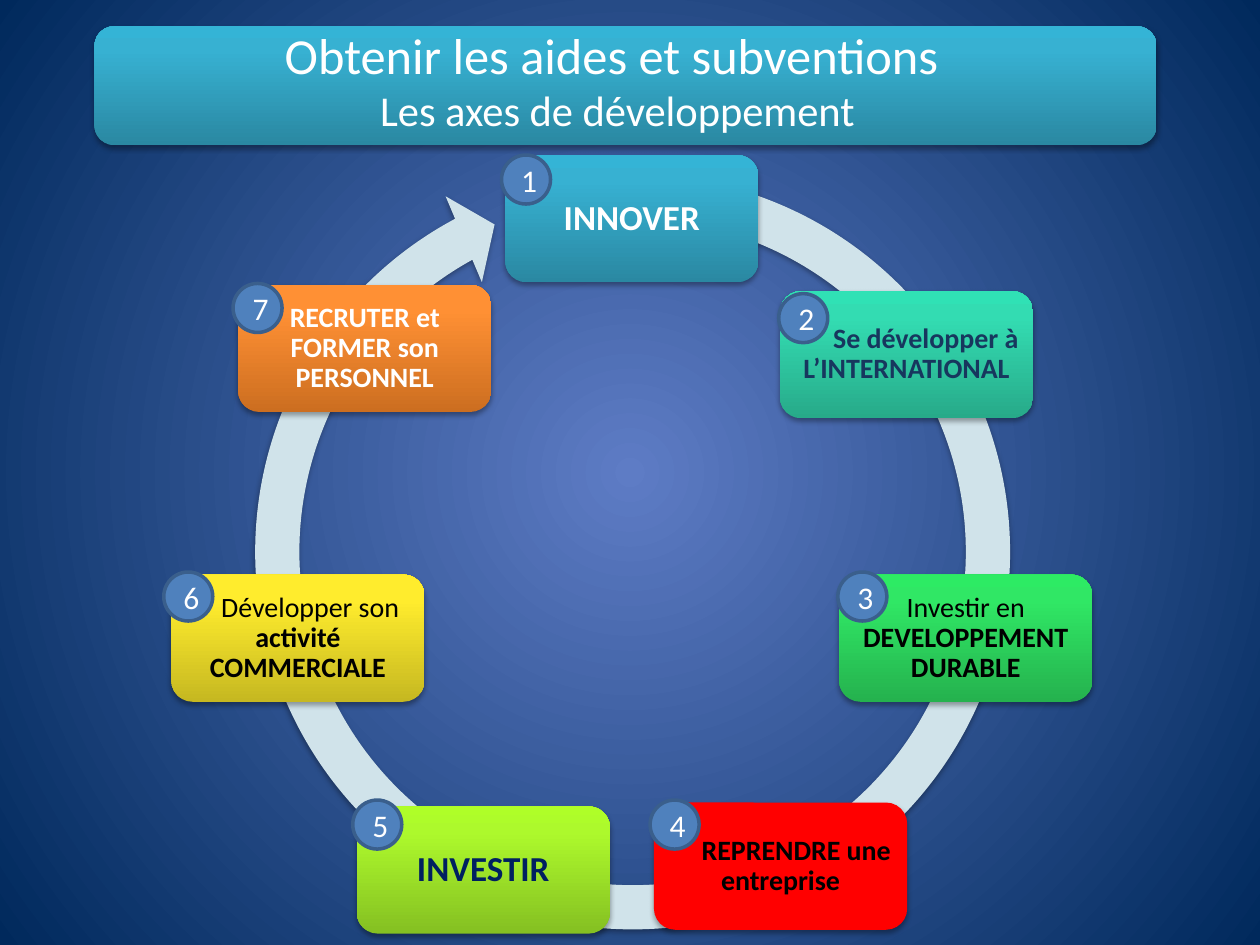
from lxml.etree import SubElement
from pptx import Presentation
from pptx.dml.color import RGBColor
from pptx.enum.shapes import MSO_SHAPE as Shape
from pptx.enum.text import MSO_ANCHOR as Anchor, PP_ALIGN as Align
from pptx.oxml.ns import qn
from pptx.util import Pt

FONT = "Calibri"
COLORS = {
    "white": "FFFFFF", "black": "000000", "navy": "17375E", "deep": "002060",
    "centre": "5E7CC5", "edge": "00295C", "ring": "D0E3EA",
    "badge": "4F81BD", "badge line": "3A5F8C", "red": "FF0000",
}
# Each gradient runs from the bottom of the box to its top
GRADIENTS = {
    "blue": ("2A88A2", "37B1D2", "34B4D6"),
    "teal": ("27AA89", "33DCB2", "30E1B5"),
    "green": ("25B24E", "30E765", "2DEB64"),
    "lime": ("85C022", "ADF92C", "AFFE28"),
    "yellow": ("C6B821", "FFEC2D", "FFED2E"),
    "orange": ("CC6E20", "FF9034", "FF9136"),
}
NODE_SIZE = (144.7, 72.7)
BADGE_SIZE = (28, 28)

# Node corner, badge corner, fill, text colour, size, first-line indent, runs (text, bold)
AXES = [
    ((288.7, 88.6), (286.6, 88.6), "blue", "white", 20, 0, [("INNOVER", True)]),
    ((445.7, 166.3), (445, 167.8), "teal", "navy", 16, 22,
     [("Se développer à L’INTERNATIONAL", True)]),
    ((479.5, 328.3), (478.8, 326.9), "green", "black", 16, 0,
     [("Investir en ", False), ("DEVELOPPEMENT DURABLE", True)]),
    ((373.7, 458.6), (371.5, 457.2), "red", "black", 16, 18,
     [("REPRENDRE une entreprise", True)]),
    ((203.8, 460.8), (201.6, 457.2), "lime", "deep", 20, 0, [("INVESTIR", True)]),
    ((97.9, 328.3), (93.6, 326.9), "yellow", "black", 16, 14,
     [("Développer son ", False), ("activité COMMERCIALE", True)]),
    ((136.1, 162.7), (133.2, 162), "orange", "white", 16, 0,
     [("RECRUTER et FORMER son PERSONNEL", True)]),
]


def rgb(name):
    return RGBColor.from_string(COLORS[name])


def set_stops(gradient, stops):
    """Replace the stops of a gradient with (percent, hex, alpha) triples."""
    stop_list = gradient.find(qn("a:gsLst"))
    for stop in list(stop_list):
        stop_list.remove(stop)
    for percent, color, alpha in stops:
        stop = SubElement(stop_list, qn("a:gs"), pos=str(percent * 1000))
        tint = SubElement(stop, qn("a:srgbClr"), val=color)
        if alpha < 100:
            SubElement(tint, qn("a:alpha"), val=str(alpha * 1000))


def paint_background(page):
    page.background.fill.gradient()
    gradient = next(page._element.iter(qn("a:gradFill")))
    set_stops(gradient, [(0, COLORS["centre"], 54), (100, COLORS["edge"], 100)])
    gradient.remove(gradient.find(qn("a:lin")))
    circle = SubElement(gradient, qn("a:path"), path="circle")
    SubElement(circle, qn("a:fillToRect"), l="50000", t="50000", r="50000", b="50000")


def fill_shape(shape, fill):
    if fill not in GRADIENTS:
        shape.fill.solid()
        shape.fill.fore_color.rgb = rgb(fill)
        return
    shape.fill.gradient()
    shape.fill.gradient_angle = 90
    gradient = shape._element.spPr.find(qn("a:gradFill"))
    set_stops(gradient, zip((0, 80, 100), GRADIENTS[fill], (100, 100, 100)))
    gradient.find(qn("a:lin")).set("ang", str(270 * 60000))


def add_shadow(shape):
    effects = shape._element.spPr.find(qn("a:effectLst"))
    shadow = SubElement(effects, qn("a:outerShdw"), blurRad=str(Pt(3.1)),
                        dist=str(Pt(1.8)), dir=str(90 * 60000), rotWithShape="0")
    color = SubElement(shadow, qn("a:srgbClr"), val=COLORS["black"])
    SubElement(color, qn("a:alpha"), val="35000")


def add_figure(page, kind, corner, size, fill, shadow=True):
    shape = page.shapes.add_shape(kind, *map(Pt, (*corner, *size)))
    shape.shadow.inherit = False
    fill_shape(shape, fill)
    shape.line.fill.background()
    if shadow:
        add_shadow(shape)
    return shape


def add_span(para, text, size, color, bold=False):
    span = para.add_run()
    span.text = text
    span.font.name = FONT
    span.font.size = Pt(size)
    span.font.bold = bold
    span.font.color.rgb = rgb(color)


def centred_para(shape):
    frame = shape.text_frame
    frame.word_wrap = True
    frame.vertical_anchor = Anchor.MIDDLE
    para = frame.paragraphs[0]
    para.alignment = Align.CENTER
    return para


def add_title(page):
    add_figure(page, Shape.ROUNDED_RECTANGLE, (54, 15), (607, 68), "blue")
    box = page.shapes.add_textbox(Pt(0), Pt(15), Pt(705.6), Pt(57))
    box.text_frame.margin_top = Pt(4)
    box.text_frame.margin_bottom = 0
    para = centred_para(box)
    add_span(para, "Obtenir les aides et subventions ", 28.8, "white")
    para.add_line_break()
    add_span(para, "Les axes de développement", 24.3, "white")


def add_ring(page):
    ring = add_figure(page, Shape.CIRCULAR_ARROW, (131.8, 85.7), (459.4, 459.4), "ring")
    for index, value in enumerate((0.055, 3.307, 144.974, 169.607, 0.058)):
        ring.adjustments[index] = value


def add_node(page, corner, fill, color, size, indent, runs):
    node = add_figure(page, Shape.ROUNDED_RECTANGLE, corner, NODE_SIZE, fill)
    frame = node.text_frame
    frame.margin_left = frame.margin_right = Pt(1.5)
    frame.margin_top = frame.margin_bottom = Pt(1.5)
    para = centred_para(node)
    para.line_spacing = 0.9
    if indent:
        # The first line makes room for the badge
        para._p.get_or_add_pPr().set("indent", str(Pt(indent)))
    for text, bold in runs:
        add_span(para, text, size, color, bold)


def add_badge(page, corner, number):
    badge = add_figure(page, Shape.OVAL, corner, BADGE_SIZE, "badge", shadow=False)
    badge.line.color.rgb = rgb("badge line")
    badge.line.width = Pt(2)
    add_span(centred_para(badge), str(number), 18, "white")


def main():
    deck = Presentation()
    deck.slide_width, deck.slide_height = Pt(720), Pt(540)
    page = deck.slides.add_slide(deck.slide_layouts[6])

    # Backdrop, heading and ring
    paint_background(page)
    add_title(page)
    add_ring(page)

    # Development axes, then their numbers on top
    for corner, _, *style in AXES:
        add_node(page, corner, *style)
    for number, axis in enumerate(AXES, start=1):
        add_badge(page, axis[1], number)

    deck.save("out.pptx")


if __name__ == "__main__":
    main()
